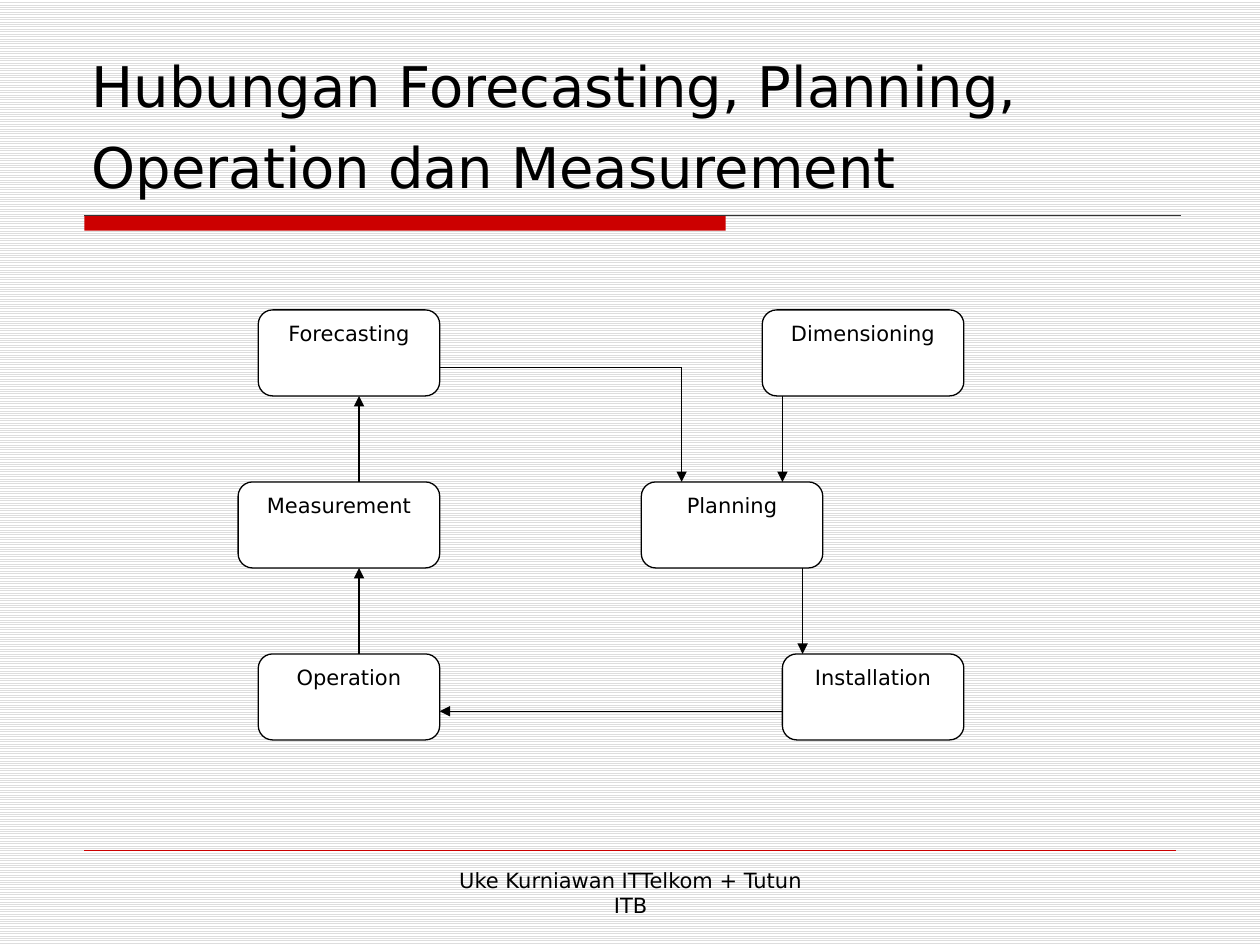
from typing import NamedTuple

from lxml.etree import SubElement
from pptx import Presentation
from pptx.dml.color import RGBColor
from pptx.enum.dml import MSO_PATTERN
from pptx.enum.shapes import MSO_CONNECTOR, MSO_SHAPE
from pptx.enum.text import MSO_ANCHOR as Anchor, PP_ALIGN as Align
from pptx.oxml.ns import qn
from pptx.util import Inches, Pt

BLACK = RGBColor(0x00, 0x00, 0x00)
WHITE = RGBColor(0xFF, 0xFF, 0xFF)
STRIPE = RGBColor(0xDD, 0xDD, 0xDD)
RED = RGBColor(0xCC, 0x00, 0x00)
DARK = RGBColor(0x33, 0x33, 0x33)

WIDTH, HEIGHT = 10, 7.5
LEFT, TOP = 1.89, 2.46
COL, ROW = 0.16, 0.2275
BOX_ROWS = 3
FONT = {"name": "DejaVu Sans"}


class Box(NamedTuple):
    label: str
    col: int
    row: int
    cols: int


class Flow(NamedTuple):
    start: tuple[int, int]
    end: tuple[int, int]
    arrow: bool = True


BOXES = [
    Box("Forecasting", 1, 0, 9),
    Box("Measurement", 0, 6, 10),
    Box("Operation", 1, 12, 9),
    Box("Dimensioning", 26, 0, 10),
    Box("Planning", 20, 6, 9),
    Box("Installation", 27, 12, 9),
]
FLOWS = [
    Flow((6, 6), (6, 3)),
    Flow((6, 12), (6, 9)),
    Flow((27, 3), (27, 6)),
    Flow((28, 9), (28, 12)),
    Flow((10, 2), (22, 2), arrow=False),
    Flow((22, 2), (22, 6)),
    Flow((27, 14), (10, 14)),
]


def at(col: float, row: float) -> tuple[int, int]:
    return Inches(LEFT + col * COL), Inches(TOP + row * ROW)


def share(x: float, y: float) -> tuple[int, int]:
    return Inches(x * WIDTH), Inches(y * HEIGHT)


def add_run(p, text: str, size: float) -> None:
    r = p.add_run()
    r.text = text
    for key, value in {**FONT, "size": Pt(size)}.items():
        setattr(r.font, key, value)
    r.font.color.rgb = BLACK


def write(s, runs: list[tuple[str, float]], anchor: Anchor, align: Align) -> None:
    tf = s.text_frame
    for key, value in {"word_wrap": True, "vertical_anchor": anchor}.items():
        setattr(tf, key, value)
    p = tf.paragraphs[0]
    p.alignment = align
    for text, size in runs:
        add_run(p, text, size)


def add_line(shapes, start, end, color: RGBColor, width: float, arrow: bool = False) -> None:
    s = shapes.add_connector(MSO_CONNECTOR.STRAIGHT, *start, *end)
    s.line.color.rgb = color
    s.line.width = Pt(width)
    if arrow:
        SubElement(s.line._get_or_add_ln(), qn("a:tailEnd"), type="triangle")
    SubElement(s._element.spPr, qn("a:effectLst"))


def add_box(shapes, box: Box) -> None:
    size = Inches(box.cols * COL), Inches(BOX_ROWS * ROW)
    s = shapes.add_shape(
        MSO_SHAPE.FLOWCHART_ALTERNATE_PROCESS, *at(box.col, box.row), *size)
    s.shadow.inherit = False
    s.fill.solid()
    s.fill.fore_color.rgb = WHITE
    s.line.color.rgb = BLACK
    s.line.width = Pt(0.75)
    write(s, [(box.label, 12)], Anchor.TOP, Align.CENTER)


def add_frame(slide) -> None:
    fill = slide.background.fill
    fill.patterned()
    fill.pattern = MSO_PATTERN.LIGHT_HORIZONTAL
    fill.fore_color.rgb = STRIPE
    fill.back_color.rgb = WHITE

    shapes = slide.shapes
    bar = shapes.add_shape(
        MSO_SHAPE.RECTANGLE, *share(0.067, 0.228), *share(0.509, 0.016))
    bar.shadow.inherit = False
    bar.fill.solid()
    bar.fill.fore_color.rgb = RED
    bar.line.fill.background()
    add_line(shapes, share(0.067, 0.228), share(0.937, 0.228), DARK, 0.75)
    add_line(shapes, share(0.067, 0.9), share(0.933, 0.9), RED, 0.25)


def main() -> None:
    prs = Presentation()
    prs.slide_width, prs.slide_height = Inches(WIDTH), Inches(HEIGHT)
    slide = prs.slides.add_slide(prs.slide_layouts[6])
    shapes = slide.shapes
    add_frame(slide)

    title = shapes.add_textbox(*share(0.063, 0.044), *share(0.875, 0.177))
    heading = "Hubungan Forecasting, Planning, Operation dan Measurement"
    write(title, [(heading, 32), (" ", 40)], Anchor.BOTTOM, Align.LEFT)

    for box in BOXES:
        add_box(shapes, box)
    for flow in FLOWS:
        add_line(shapes, at(*flow.start), at(*flow.end), BLACK, 0.75, flow.arrow)

    footer = shapes.add_textbox(*share(0.342, 0.911), *share(0.317, 0.069))
    write(footer, [("Uke Kurniawan ITTelkom + Tutun ITB", 12)], Anchor.TOP, Align.CENTER)
    prs.save("out.pptx")


if __name__ == "__main__":
    main()
